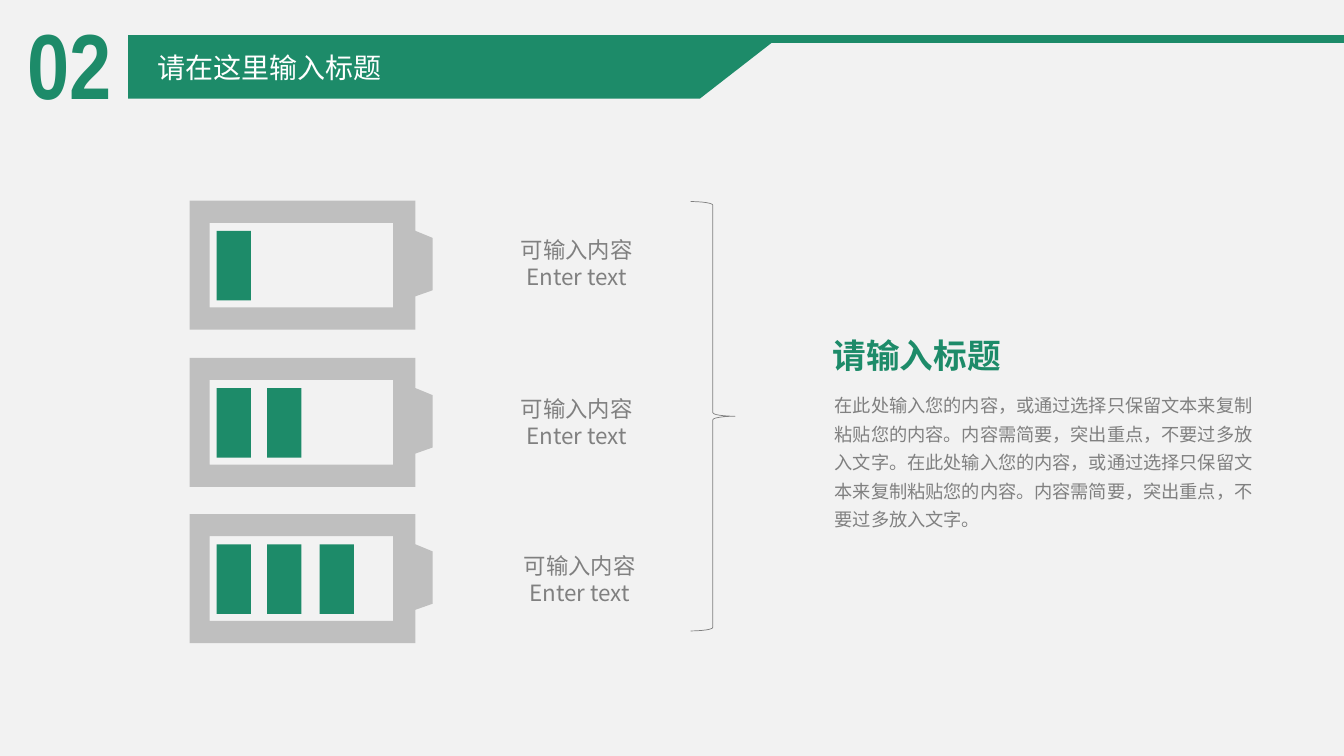
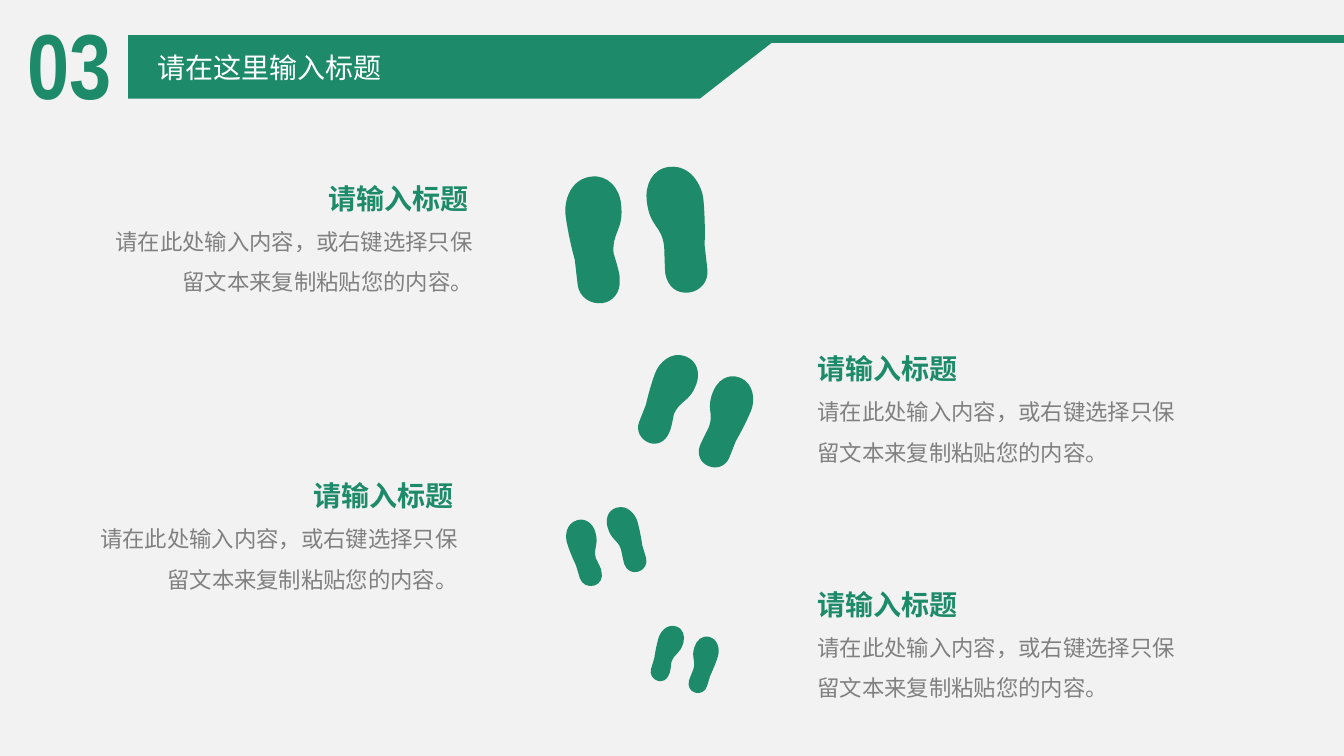
from dataclasses import dataclass

from lxml import etree
from pptx import Presentation
from pptx.dml.color import RGBColor
from pptx.enum.shapes import MSO_CONNECTOR, MSO_SHAPE
from pptx.enum.text import MSO_AUTO_SIZE, PP_ALIGN
from pptx.oxml.ns import qn
from pptx.util import Inches, Pt

LEFT, CENTER, RIGHT = PP_ALIGN.LEFT, PP_ALIGN.CENTER, PP_ALIGN.RIGHT
RECTANGLE, RIGHT_BRACE = MSO_SHAPE.RECTANGLE, MSO_SHAPE.RIGHT_BRACE
STRAIGHT = MSO_CONNECTOR.STRAIGHT
FIT_TEXT = MSO_AUTO_SIZE.SHAPE_TO_FIT_TEXT


@dataclass(frozen=True)
class Theme:
    green: RGBColor = RGBColor(0x1D, 0x8B, 0x69)
    gray: RGBColor = RGBColor(0x80, 0x80, 0x80)
    silver: RGBColor = RGBColor(0xBF, 0xBF, 0xBF)
    paper: RGBColor = RGBColor(0xF2, 0xF2, 0xF2)
    white: RGBColor = RGBColor(0xFF, 0xFF, 0xFF)
    font: str = "Noto Sans CJK SC"
    number_font: str = "Arial Narrow"
    number_size: int = 66
    heading_size: int = 24
    title_size: int = 20
    label_size: int = 16
    body_size: int = 13


THEME = Theme()
SLIDE_WIDTH, SLIDE_HEIGHT = 13.33, 7.5
TITLE = "请在这里输入标题"
HEADING = "请输入标题"
LABEL = "可输入内容\nEnter text"
SUMMARY = "在此处输入您的内容，或通过选择只保留文本来复制粘贴您的内容。内容需简要，突出重点，不要过多放入文字。" * 2
STEP_TEXT = "请在此处输入内容，或右键选择只保留文本来复制粘贴您的内容。"

BATTERY_CASE = [(2.41, 0.37), (2.24, 0.3), (2.24, 0), (0, 0), (0, 1.28),
                (2.24, 1.28), (2.24, 0.95), (2.41, 0.89)]
BATTERY_WINDOW = [(2.02, 1.06), (0.2, 1.06), (0.2, 0.22), (2.02, 0.22)]
BAR_OFFSETS = [0.27, 0.77, 1.29]

# Upright soles on a grid: a start point, then Bezier curves
# (two controls and an end).
SOLE_GRID = (56, 126)
LEFT_SOLE = [
    (30, 0),
    (8, 0), (0, 22), (0, 35),
    (0, 42), (1, 61), (4, 80),
    (4, 105), (4, 105), (4, 105),
    (4, 117), (14, 126), (26, 126),
    (37, 126), (46, 117), (46, 104),
    (47, 100), (45, 89), (43, 78),
    (44, 56), (56, 57), (56, 30),
    (56, 14), (46, 0), (30, 0),
]
RIGHT_SOLE = [
    (26, 0),
    (9, 0), (0, 15), (0, 31),
    (0, 58), (12, 56), (12, 78),
    (11, 90), (10, 101), (10, 105),
    (11, 118), (19, 126), (31, 126),
    (43, 126), (52, 117), (52, 105),
    (52, 81), (52, 81), (52, 81),
    (55, 62), (56, 42), (56, 35),
    (56, 23), (48, 0), (26, 0),
]


class Deck:
    def __init__(self, theme):
        self.theme = theme
        self.presentation = Presentation()
        self.presentation.slide_width = Inches(SLIDE_WIDTH)
        self.presentation.slide_height = Inches(SLIDE_HEIGHT)
        self.layout = self.presentation.slide_layouts[6]
        for placeholder in list(self.layout.placeholders):
            self.layout.shapes.element.remove(placeholder.element)
        self.slide = None

    def new_slide(self, number):
        is_first = self.slide is None
        self.slide = self.presentation.slides.add_slide(self.layout)
        if is_first:
            self.decorate_layout()
        self.text(number, 0.17, 0.02, 1.59, 1.21, self.theme.number_size,
                  self.theme.green, bold=True, font=self.theme.number_font)
        self.text(TITLE, 1.46, 0.45, 3.34, 0.44, self.theme.title_size, self.theme.white)

    def decorate_layout(self):
        """Draw paper and title band, then move them to the layout all slides share."""
        paper = self.rectangle(0, 0, SLIDE_WIDTH, SLIDE_HEIGHT, self.theme.paper)
        rule = self.line(6.78, 0.39, SLIDE_WIDTH, 0.39, self.theme.green, 6)
        band = self.outline([[(1.27, 0.35), (7.75, 0.35), (6.94, 0.98), (1.27, 0.98)]],
                            self.theme.green)
        for shape in (paper, rule, band):
            self.layout.shapes.element.append(shape.element)

    def line(self, x1, y1, x2, y2, color, width):
        connector = self.slide.shapes.add_connector(
            STRAIGHT, Inches(x1), Inches(y1), Inches(x2), Inches(y2))
        connector.line.color.rgb = color
        connector.line.width = Pt(width)
        etree.SubElement(connector.element.spPr, qn("a:effectLst"))
        return connector

    def paint(self, shape, color):
        shape.shadow.inherit = False
        shape.fill.solid()
        shape.fill.fore_color.rgb = color
        shape.line.fill.background()
        return shape

    def outline(self, contours, color):
        """Add a filled freeform; later contours cut holes in the first."""
        builder = None
        for contour in contours:
            start, *others = [(Inches(x), Inches(y)) for x, y in contour]
            if builder is None:
                builder = self.slide.shapes.build_freeform(*start)
            else:
                builder.move_to(*start)
            builder.add_line_segments(others, close=True)
        return self.paint(builder.convert_to_shape(), color)

    def rectangle(self, left, top, width, height, color):
        shape = self.slide.shapes.add_shape(
            RECTANGLE, Inches(left), Inches(top), Inches(width), Inches(height))
        return self.paint(shape, color)

    def brace(self, left, top, width, height):
        shape = self.slide.shapes.add_shape(
            RIGHT_BRACE, Inches(left), Inches(top), Inches(width), Inches(height))
        shape.shadow.inherit = False
        shape.fill.background()
        shape.line.color.rgb = self.theme.gray
        shape.line.width = Pt(0.5)
        shape.adjustments[0] = 0.08
        shape.adjustments[1] = 0.5

    def text(self, content, left, top, width, height, size, color, bold=False,
             font=None, align=LEFT, spacing=None, wrap=True, inset=True):
        box = self.slide.shapes.add_textbox(
            Inches(left), Inches(top), Inches(width), Inches(height))
        frame = box.text_frame
        frame.word_wrap = wrap
        frame.auto_size = FIT_TEXT
        if not inset:
            frame.margin_left = frame.margin_right = 0
            frame.margin_top = frame.margin_bottom = 0
        frame.text = content
        for paragraph in frame.paragraphs:
            paragraph.alignment = align
            if spacing:
                paragraph.line_spacing = spacing
            paragraph.font.size = Pt(size)
            paragraph.font.bold = bold
            paragraph.font.color.rgb = color
            paragraph.font.name = font or self.theme.font
            defaults = paragraph._p.pPr.find(qn("a:defRPr"))
            etree.SubElement(defaults, qn("a:ea"), typeface=paragraph.font.name)

    def heading(self, left, top, width, height, size):
        self.text(HEADING, left, top, width, height, size, self.theme.green,
                  bold=True, spacing=1.5)

    def battery(self, left, top, charge):
        contours = [[(left + x, top + y) for x, y in contour]
                    for contour in (BATTERY_CASE, BATTERY_WINDOW)]
        self.outline(contours, self.theme.silver)
        for offset in BAR_OFFSETS[:charge]:
            self.rectangle(left + offset, top + 0.3, 0.34, 0.69, self.theme.green)

    def footprint(self, sole, left, top, width, height, rotation):
        """Add a freeform of the given box and give it the curves of a sole."""
        right, bottom = left + width, top + height
        shape = self.outline([[(left, top), (right, top), (right, bottom), (left, bottom)]],
                             self.theme.green)
        shape.rotation = rotation
        contour = shape.element.spPr.find(".//" + qn("a:path"))
        for segment in list(contour):
            contour.remove(segment)
        for name, size in zip("wh", SOLE_GRID):
            contour.set(name, str(size))
        curves = [sole[first:first + 3] for first in range(1, len(sole), 3)]
        segments = [("a:moveTo", sole[:1])] + [("a:cubicBezTo", curve) for curve in curves]
        for tag, points in segments:
            segment = etree.SubElement(contour, qn(tag))
            for x, y in points:
                etree.SubElement(segment, qn("a:pt"), x=str(x), y=str(y))
        etree.SubElement(contour, qn("a:close"))

    def step(self, left, top, align):
        heading_left = left + 2.28 if align == RIGHT else left
        self.text(STEP_TEXT, left, top + 0.5, 3.91, 0.86, self.theme.label_size,
                  self.theme.gray, align=align, spacing=1.5)
        self.heading(heading_left, top, 1.7, 0.55, self.theme.title_size)


def build_batteries(deck):
    deck.new_slide("02")
    rows = [(1.99, 5.06, 2.29), (3.55, 5.06, 3.87), (5.1, 5.09, 5.43)]
    for charge, (top, label_left, label_top) in enumerate(rows, start=1):
        deck.battery(1.88, top, charge)
        deck.text(LABEL, label_left, label_top, 1.32, 0.64, THEME.label_size,
                  THEME.gray, align=CENTER, wrap=False)
    deck.brace(6.85, 2, 0.44, 4.26)
    deck.text(SUMMARY, 8.28, 3.85, 4.3, 1.68, THEME.body_size, THEME.gray,
              spacing=1.3, inset=False)
    deck.heading(8.16, 3.07, 1.87, 0.64, THEME.heading_size)


def build_footprints(deck):
    deck.new_slide("03")
    pairs = [
        ((5.64, 1.75), (6.45, 1.65), (0.56, 1.26), 353.4),
        ((6.41, 3.5), (6.97, 3.72), (0.42, 0.93), 21.5),
        ((5.66, 5.15), (6.07, 5.02), (0.3, 0.67), 343.3),
        ((6.49, 6.2), (6.84, 6.31), (0.25, 0.57), 16.8),
    ]
    for left_place, right_place, size, rotation in pairs:
        deck.footprint(LEFT_SOLE, *left_place, *size, rotation)
        deck.footprint(RIGHT_SOLE, *right_place, *size, rotation)
    for left, top, align in [(0.88, 1.58, RIGHT), (8.01, 3.27, LEFT),
                             (0.73, 4.53, RIGHT), (8.01, 5.61, LEFT)]:
        deck.step(left, top, align)


def main():
    deck = Deck(THEME)
    build_batteries(deck)
    build_footprints(deck)
    deck.presentation.save("out.pptx")


if __name__ == "__main__":
    main()
